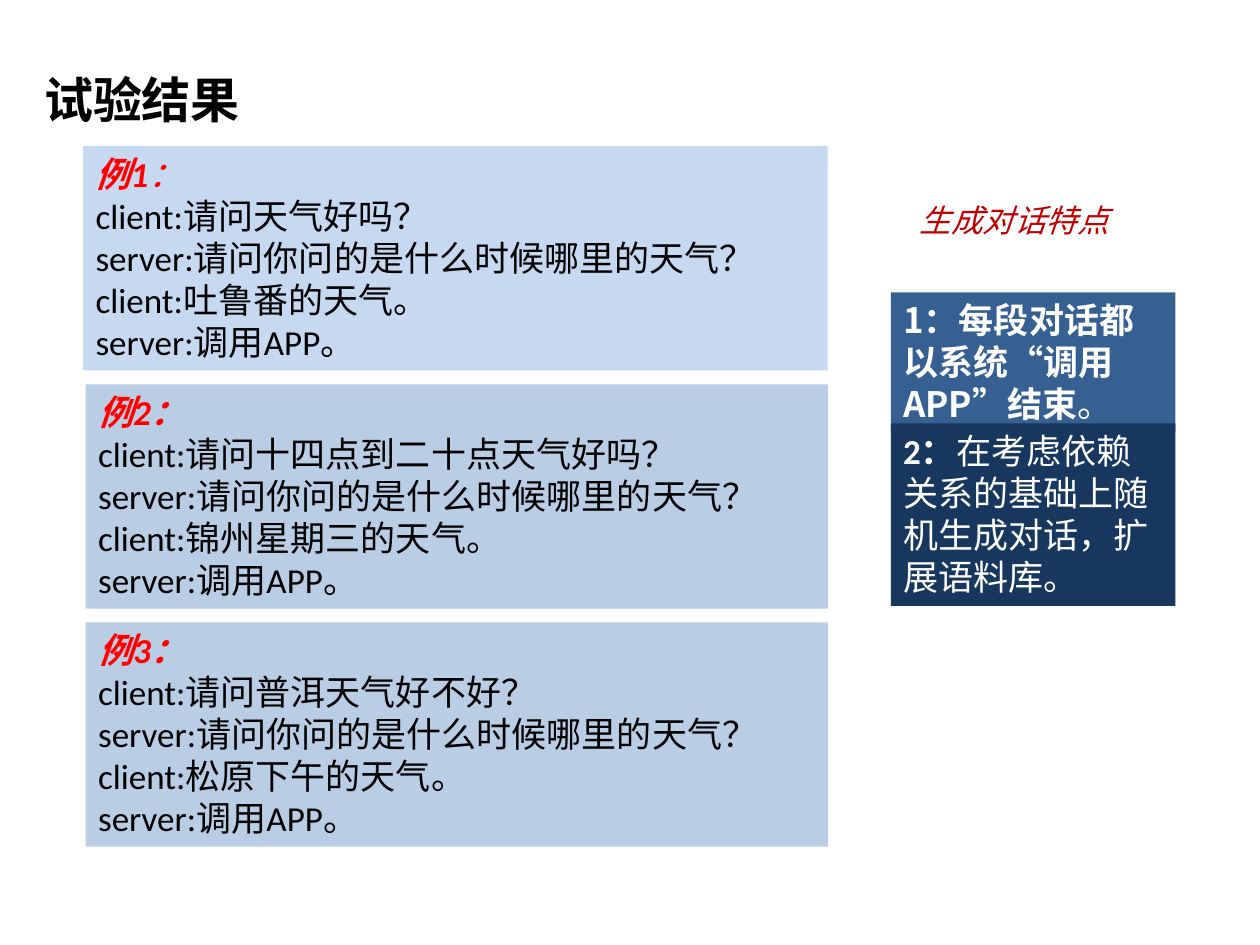
import pptx
import pptx.dml.color
import pptx.enum.shapes
import pptx.enum.text
import pptx.oxml.ns
import pptx.util
from lxml import etree
from pptx.util import Inches

COLORS = {
    "black": "000000", "white": "FFFFFF", "red": "FF0000", "dark red": "C00000",
    "pale blue": "C6D9F1", "light blue": "B9CDE5", "blue": "376092", "navy": "17375E",
}
LATIN = "Calibri"
CHINESE = "Noto Sans CJK SC"
CJK = "Noto Sans CJK JP"


def rgb(color):
    return pptx.dml.color.RGBColor.from_string(COLORS[color])


def add_run(paragraph, text, font=LATIN, size=20, color="black", bold=False, italic=False):
    run = paragraph.add_run()
    run.text = text
    run.font.name = font
    run.font.size = pptx.util.Pt(size)
    run.font.bold = bold
    run.font.italic = italic
    run.font.color.rgb = rgb(color)
    # East Asian typeface for the Chinese characters
    east_asian = etree.SubElement(run.font._element, pptx.oxml.ns.qn("a:ea"))
    east_asian.set("typeface", CHINESE if font == LATIN else font)


class SlideBuilder:
    """Holds the text style and the current slide."""

    def __init__(self, slide):
        self.slide = slide
        self.align = pptx.enum.text.PP_ALIGN.LEFT
        self.anchor = pptx.enum.text.MSO_ANCHOR.TOP
        self.fit = pptx.enum.text.MSO_AUTO_SIZE.SHAPE_TO_FIT_TEXT

    def fill_text(self, shape, paragraphs):
        """Fill a shape with paragraphs, each a list of (text, format) runs."""
        frame = shape.text_frame
        frame.word_wrap = True
        frame.auto_size = self.fit
        frame.vertical_anchor = self.anchor
        for index, runs in enumerate(paragraphs):
            paragraph = frame.add_paragraph() if index else frame.paragraphs[0]
            paragraph.alignment = self.align
            for text, style in runs:
                add_run(paragraph, text, **style)

    def title(self, text, left, top, width, height, **style):
        heading = self.slide.shapes.title
        heading.left, heading.top = Inches(left), Inches(top)
        heading.width, heading.height = Inches(width), Inches(height)
        self.fill_text(heading, [[(text, style)]])

    def label(self, text, left, top, width, height, **style):
        caption = self.slide.shapes.add_textbox(
            Inches(left), Inches(top), Inches(width), Inches(height))
        self.fill_text(caption, [[(text, style)]])

    def panel(self, paragraphs, left, top, width, height, fill):
        panel = self.slide.shapes.add_shape(
            pptx.enum.shapes.MSO_SHAPE.RECTANGLE,
            Inches(left), Inches(top), Inches(width), Inches(height))
        panel.shadow.inherit = False
        panel.fill.solid()
        panel.fill.fore_color.rgb = rgb(fill)
        panel.line.fill.background()
        self.fill_text(panel, paragraphs)


def main():
    deck = pptx.Presentation()
    deck.slide_width, deck.slide_height = Inches(10), Inches(7.5)
    builder = SlideBuilder(deck.slides.add_slide(deck.slide_layouts[5]))

    # Title
    builder.title("试验结果", 0.25, 0.5, 5.74, 0.57, font=CHINESE, size=28, bold=True)

    # Example dialogues: heading runs, question, answer, left edge, fill
    heading = dict(color="red", bold=True, italic=True)
    examples = [
        ([("例1", heading), ("：", dict(heading, bold=False))],
         "请问天气好吗？", "吐鲁番的天气。", 0.66, "pale blue"),
        ([("例2：", heading)],
         "请问十四点到二十点天气好吗？", "锦州星期三的天气。", 0.68, "light blue"),
        ([("例3：", heading)],
         "请问普洱天气好不好？", "松原下午的天气。", 0.68, "light blue"),
    ]
    right_edge, first_top, pitch = 6.57, 1.16, 1.89
    for row, (heading_runs, question, answer, left, fill) in enumerate(examples):
        turns = [
            f"client:{question}",
            "server:请问你问的是什么时候哪里的天气？",
            f"client:{answer}",
            "server:调用APP。",
        ]
        builder.panel([heading_runs] + [[(turn, {})] for turn in turns],
                      left, first_top + row * pitch, right_edge - left, 1.78, fill)

    # Features of the generated dialogues
    strong = dict(color="white", bold=True)
    plain = dict(color="white", font=CJK)
    builder.panel([[("1：每段对话都以系统“调用APP”结束", dict(strong, font=CJK)), ("。", plain)]],
                  7.07, 2.32, 2.26, 1.11, "blue")
    builder.panel([[("2：", strong), ("在考虑依赖关系的基础上随机生成对话，扩展语料库。", plain)]],
                  7.07, 3.36, 2.26, 1.45, "navy")
    builder.label("生成对话特点", 7.2, 1.55, 1.73, 0.4,
                  font=CJK, size=18, color="dark red", italic=True)

    deck.save("out.pptx")


if __name__ == "__main__":
    main()
